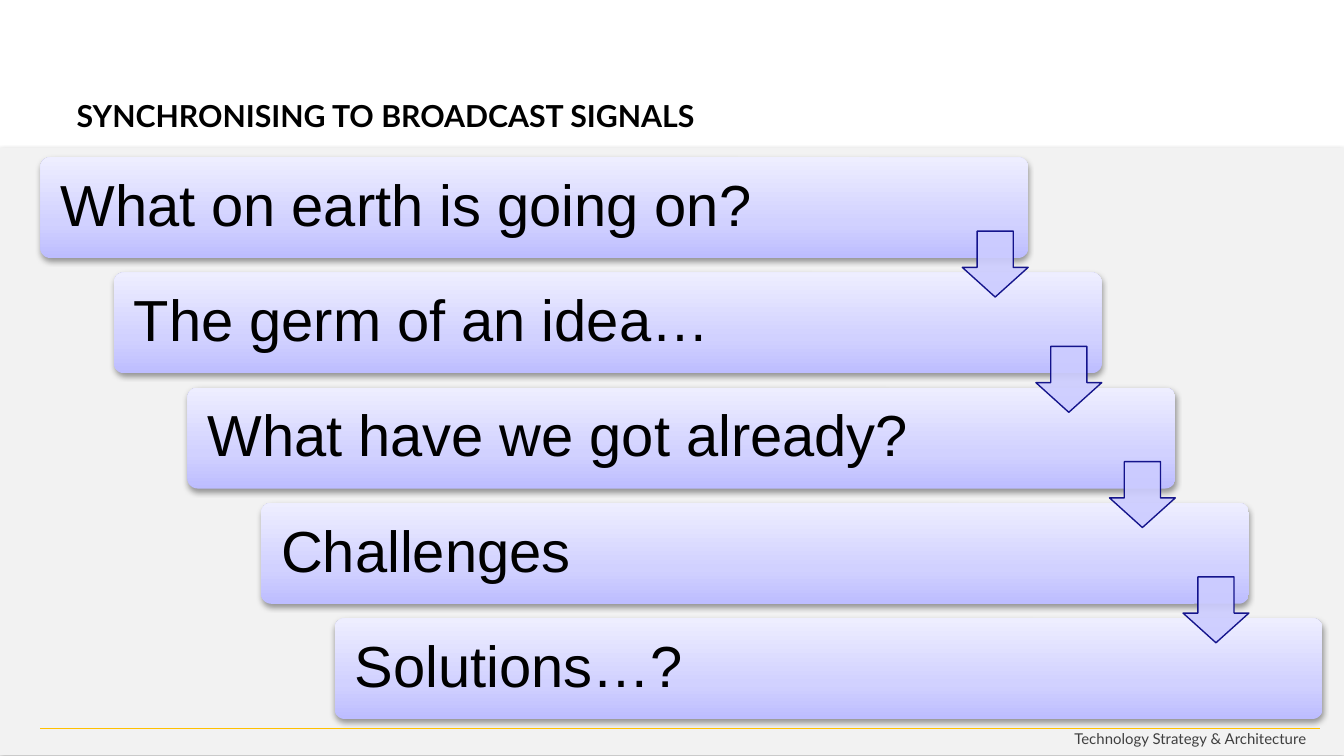
from lxml.etree import SubElement
from pptx import Presentation
from pptx.dml.color import RGBColor
from pptx.enum.shapes import MSO_CONNECTOR, MSO_SHAPE
from pptx.enum.text import MSO_ANCHOR, PP_ALIGN
from pptx.oxml.ns import qn
from pptx.util import Inches, Pt

TITLE = "SYNCHRONISING TO BROADCAST SIGNALS"
FOOTER = "Technology Strategy & Architecture"
STEPS = [
    "What on earth is going on?",
    "The germ of an idea…",
    "What have we got already?",
    "Challenges",
    "Solutions…?",
]
COLORS = {
    "panel": "F2F2F2", "text": "000000", "footer": "3F3F3F", "rule": "FFC000",
    "arrow": "CCCCFF", "arrow_line": "000080", "shadow": "000000",
}
CARD_STOPS = [(0, "BDBDFF"), (35, "D1D1FF"), (100, "EEEEFF")]
CARD_W, CARD_H = 7.35, 0.75
FIRST_X, FIRST_Y = 0.3, 1.17
LAST_X, LAST_Y = 2.49, 4.6
ARROW, ARROW_TOP = 0.49, 0.55
PAD = 0.02


def rgb(name):
    return RGBColor.from_string(COLORS[name])


def write(shape, text, size, font="Lato", color="text", bold=False, align=PP_ALIGN.LEFT,
          anchor=MSO_ANCHOR.TOP, inset=None, spacing=None):
    tf = shape.text_frame
    tf.word_wrap = True
    tf.vertical_anchor = anchor
    if inset is not None:
        tf.margin_left = tf.margin_right = tf.margin_top = tf.margin_bottom = Inches(inset)
    p = tf.paragraphs[0]
    p.alignment = align
    if spacing:
        p.line_spacing = spacing
    r = p.add_run()
    r.text = text
    r.font.size, r.font.name, r.font.bold = Pt(size), font, bold
    r.font.color.rgb = rgb(color)


def add_shape(s, kind, box, adjustments=()):
    sp = s.shapes.add_shape(kind, *map(Inches, box))
    sp.shadow.inherit = False
    for i, value in enumerate(adjustments):
        sp.adjustments[i] = value
    sp.line.fill.background()
    return sp


def add_color(parent, color, alpha=100):
    clr = SubElement(parent, qn("a:srgbClr"), val=color)
    if alpha < 100:
        SubElement(clr, qn("a:alpha"), val=str(alpha * 1000))


def add_shadow(sp, alpha, distance):
    effects = sp._element.spPr.find(qn("a:effectLst"))
    shadow = SubElement(effects, qn("a:outerShdw"), blurRad=str(Pt(3.1)),
                        dist=str(Pt(distance)), dir="5400000", rotWithShape="0")
    add_color(shadow, COLORS["shadow"], alpha)


def fill_gradient(sp, stops):
    sp.fill.gradient()
    sp.fill.gradient_angle = 90
    gs_list = sp._element.spPr.find(".//" + qn("a:gsLst"))
    for gs in list(gs_list):
        gs_list.remove(gs)
    for pos, color in stops:
        add_color(SubElement(gs_list, qn("a:gs"), pos=str(pos * 1000)), color)


def add_card(s, x, y, text, text_w):
    card = add_shape(s, MSO_SHAPE.ROUNDED_RECTANGLE, (x, y, CARD_W, CARD_H), [0.1])
    fill_gradient(card, CARD_STOPS)
    add_shadow(card, 38, 1.6)
    box = s.shapes.add_textbox(*map(Inches, (x + PAD, y + PAD, text_w, CARD_H - 2 * PAD)))
    write(box, text, 31, font="Arial", anchor=MSO_ANCHOR.MIDDLE, inset=0.13, spacing=0.9)


def add_arrow(s, x, y):
    arrow = add_shape(s, MSO_SHAPE.DOWN_ARROW, (x, y, ARROW, ARROW), [0.55, 0.45])
    arrow.fill.solid()
    arrow.fill.fore_color.rgb = rgb("arrow")
    arrow.line.color.rgb = rgb("arrow_line")
    arrow.line.width = Pt(0.75)
    for clr in arrow._element.spPr.iter(qn("a:srgbClr")):
        SubElement(clr, qn("a:alpha"), val="90000")


def main():
    prs = Presentation()
    prs.slide_width = Inches(10)
    prs.slide_height = prs.slide_width * 9 // 16
    s = prs.slides.add_slide(prs.slide_layouts[5])

    panel = add_shape(s, MSO_SHAPE.RECTANGLE, (0, 1.1, 10, 4.52))
    panel.fill.solid()
    panel.fill.fore_color.rgb = rgb("panel")
    add_shadow(panel, 35, 1.8)

    footer = s.shapes.add_textbox(*map(Inches, (7.74, 5.38, 2.08, 0.24)))
    write(footer, FOOTER, 8, color="footer", align=PP_ALIGN.RIGHT)

    rule = s.shapes.add_connector(MSO_CONNECTOR.STRAIGHT, *map(Inches, (0.3, 5.42, 9.82, 5.42)))
    rule.line.color.rgb = rgb("rule")
    rule.line.width = Pt(0.75)
    SubElement(rule._element.spPr, qn("a:effectLst"))

    title = s.shapes.title
    title.left, title.top, title.width, title.height = map(Inches, (0.47, 0.74, 9.18, 0.24))
    write(title, TITLE, 16.2, bold=True, anchor=MSO_ANCHOR.MIDDLE)

    gaps = len(STEPS) - 1
    step_x, step_y = (LAST_X - FIRST_X) / gaps, (LAST_Y - FIRST_Y) / gaps
    spots = [(FIRST_X + i * step_x, FIRST_Y + i * step_y) for i in range(len(STEPS))]
    for i, ((x, y), text) in enumerate(zip(spots, STEPS)):
        add_card(s, x, y, text, 6.27 if i else 6.45)
    for x, y in spots[:-1]:
        add_arrow(s, x + CARD_W - ARROW, y + ARROW_TOP)

    prs.save("out.pptx")


if __name__ == "__main__":
    main()
